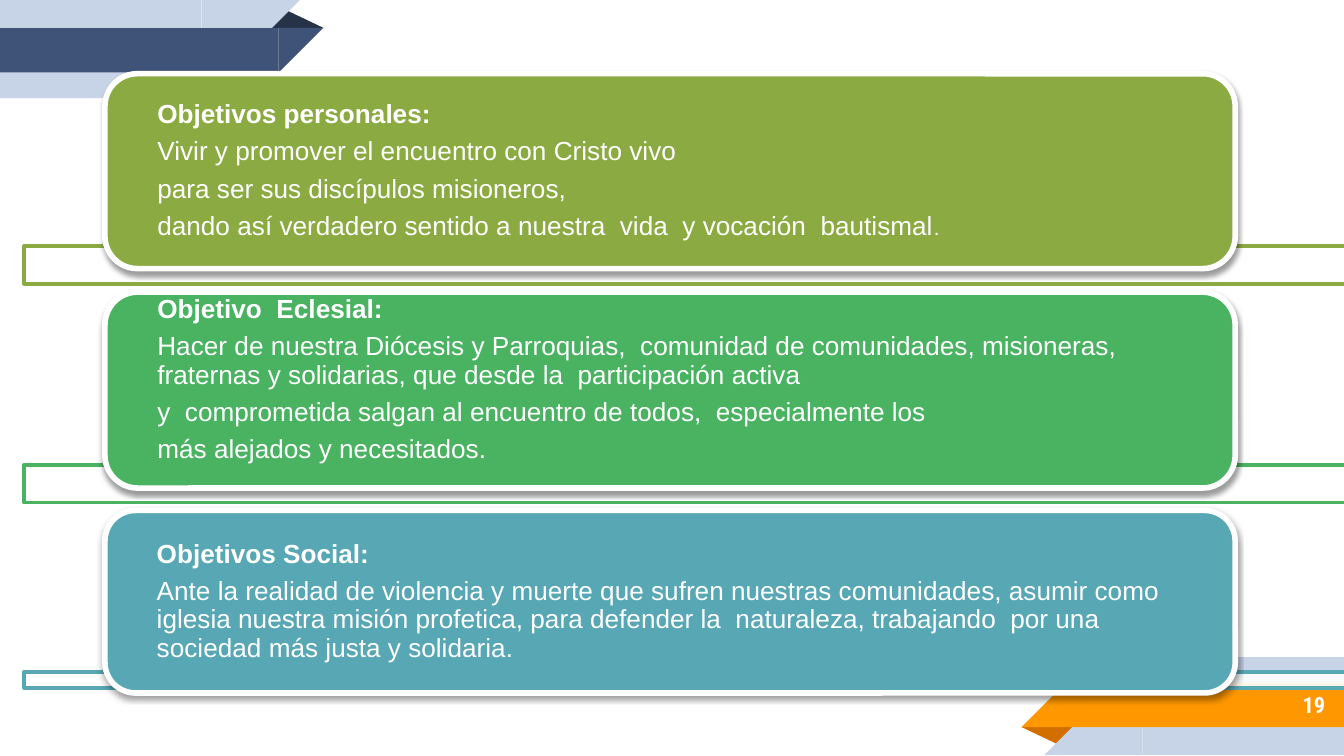
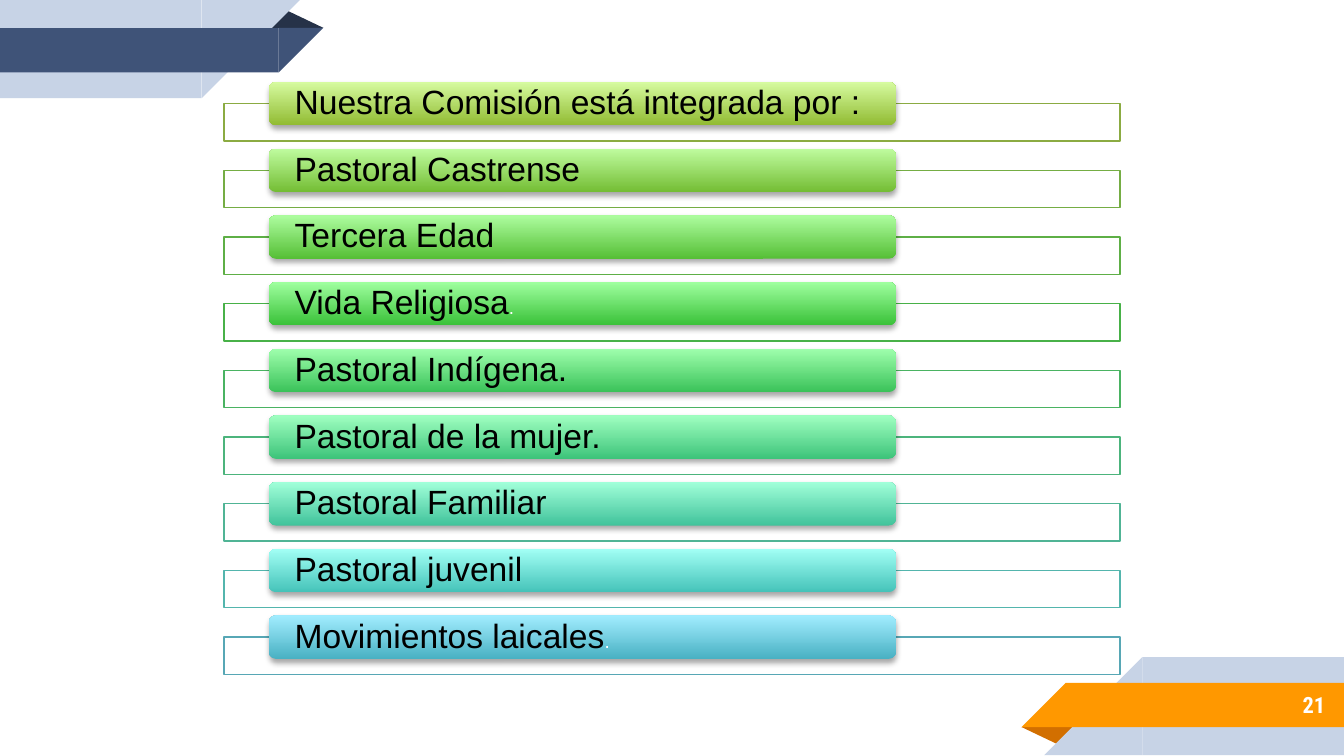
"""Build two slides: pastoral objectives and the members of the commission."""
from lxml.etree import SubElement
from pptx import Presentation
from pptx.dml.color import RGBColor
from pptx.enum.shapes import MSO_SHAPE as SHAPE
from pptx.enum.text import MSO_ANCHOR as ANCHOR, PP_ALIGN as ALIGN
from pptx.oxml.ns import qn
from pptx.util import Pt

COLORS = {
    "white": "FFFFFF", "black": "000000", "pale": "C7D3E6",
    "navy": "3F5378", "navy_fold": "263248",
    "orange": "FF9800", "orange_fold": "D26F00",
    "olive": "8BAB42", "green": "4AB362", "teal": "57A7B5",
}
BODY_FONT, NUMBER_FONT = "Arial", "Roboto Condensed"

OBJECTIVES = [
    {"color": "olive", "height": 104.4, "frame": (131.8, 20.2), "lines": [
        "Objetivos personales:",
        "Vivir y promover el encuentro con Cristo vivo",
        "para ser sus discípulos misioneros,",
        "dando así verdadero sentido a nuestra  vida  y vocación  bautismal"],
     "tail": {"text": ".", "size": 11}},
    {"color": "green", "height": 105, "frame": (249, 20.2), "lift": 10.5, "lines": [
        "Objetivo  Eclesial:",
        "Hacer de nuestra Diócesis y Parroquias,  comunidad de comunidades, "
        "misioneras, fraternas y solidarias, que desde la  participación activa",
        "y  comprometida salgan al encuentro de todos,  especialmente los",
        "más alejados y necesitados."]},
    {"color": "teal", "height": 97.8, "frame": (360, 8.6), "lines": [
        "Objetivos Social:",
        "Ante la realidad de violencia y muerte que sufren nuestras comunidades, "
        "asumir como iglesia nuestra misión profetica, para defender la  "
        "naturaleza, trabajando  por una sociedad más justa y solidaria."]},
]

MEMBERS = [
    ("Nuestra Comisión está integrada por :", "8BAB42", "91BB32", "D6FBA0"),
    ("Pastoral Castrense", "75AD44", "74BD34", "BFFC9F"),
    ("Tercera Edad", "5EAF46", "56BF36", "ADFD9F"),
    ("Vida Religiosa", "48B148", "39C138", "9FFF9F"),
    ("Pastoral Indígena.", "4AB362", "3AC259", "9FFFAD"),
    ("Pastoral de la mujer.", "4CB47C", "3DC47A", "A0FFC1"),
    ("Pastoral Familiar", "50B495", "41C39B", "A1FFD9"),
    ("Pastoral juvenil", "53B5AD", "45C3B9", "A2FFF5"),
    ("Movimientos laicales", "57A7B5", "49B1C3", "A2EDFF"),
]
DOTTED = ("Vida Religiosa", "Movimientos laicales")


def rgb(color):
    """Turn a colour name or a hex string into an RGBColor."""
    return RGBColor.from_string(COLORS.get(color, color))


def add_block(page, kind, at, fill=None, line=None, width=1, rotation=0, flip=False):
    """Add a preset shape without shadow, at (left, top, width, height)."""
    block = page.shapes.add_shape(kind, *map(Pt, at))
    block.shadow.inherit = False
    block.rotation = rotation
    if flip:
        block._element.spPr.find(qn("a:xfrm")).set("flipH", "1")
    if fill:
        block.fill.solid()
        block.fill.fore_color.rgb = rgb(fill)
    if line:
        block.line.color.rgb = rgb(line)
        block.line.width = Pt(width)
    else:
        block.line.fill.background()
    return block


def add_shadow(block, opacity, distance):
    """Give a shape a soft black shadow that falls downwards."""
    effects = block._element.spPr.find(qn("a:effectLst"))
    shadow = SubElement(effects, qn("a:outerShdw"), blurRad=str(Pt(3.1)),
                        dist=str(Pt(distance)), dir="5400000", rotWithShape="0")
    color = SubElement(shadow, qn("a:srgbClr"), val=COLORS["black"])
    SubElement(color, qn("a:alpha"), val=str(opacity * 1000))


def add_frame(page, at, line, width):
    """Add an outlined rectangle with a nearly opaque white fill."""
    frame = add_block(page, SHAPE.RECTANGLE, at, "white", line, width)
    color = frame._element.spPr.find(qn("a:solidFill")).find(qn("a:srgbClr"))
    SubElement(color, qn("a:alpha"), val="90000")


def set_frame(box, side, top=0, bottom=0):
    """Wrap the text of a box, centre it vertically and set its insets."""
    frame = box.text_frame
    frame.word_wrap = True
    frame.vertical_anchor = ANCHOR.MIDDLE
    frame.margin_left = frame.margin_right = Pt(side)
    frame.margin_top, frame.margin_bottom = Pt(top), Pt(bottom)
    return frame


def add_span(para, text, size=14, font=BODY_FONT, color="white", bold=False):
    """Add a formatted run of text to a paragraph."""
    span = para.add_run()
    span.text = text
    span.font.size = Pt(size)
    span.font.name = font
    span.font.bold = bold
    span.font.color.rgb = rgb(color)


def add_para(frame, first=True, after=4.9):
    """Return a left-aligned paragraph with tight lines."""
    para = frame.paragraphs[0] if first else frame.add_paragraph()
    para.alignment = ALIGN.LEFT
    para.line_spacing = 0.9
    para.space_after = Pt(after)
    return para


def add_page(deck, number):
    """Add a slide with the corner ribbons and its page number."""
    page = deck.slides.add_slide(deck.slide_layouts[6])
    box, wedge, fold = SHAPE.RECTANGLE, SHAPE.RIGHT_TRIANGLE, SHAPE.ISOSCELES_TRIANGLE
    ribbons = [
        (fold, (547.2, 389.5, 31, 10), "orange_fold", 180, False),
        (box, (612, 352, 108, 52.6), "pale", 0, True),
        (wedge, (559.4, 352, 52.6, 52.6), "pale", 0, True),
        (box, (571, 365.8, 149, 23.8), "orange", 0, True),
        (wedge, (547.2, 365.8, 23.8, 23.8), "orange", 0, True),
        (fold, (142.4, 5, 31, 10), "navy_fold", 0, False),
        (box, (0, 0, 108, 52.6), "pale", 180, True),
        (wedge, (108, 0, 52.6, 52.6), "pale", 180, True),
        (box, (0, 15, 149.3, 23.8), "navy", 180, True),
        (wedge, (149.3, 15, 23.8, 23.8), "navy", 180, True),
    ]
    for kind, at, color, rotation, flip in ribbons:
        block = add_block(page, kind, at, color, rotation=rotation, flip=flip)
        if kind == fold:
            block.adjustments[0] = 0.324
    label = page.shapes.add_textbox(Pt(600), Pt(365), Pt(117), Pt(25.2))
    para = set_frame(label, 7.2, 7.2, 7.2).paragraphs[0]
    para.alignment = ALIGN.RIGHT
    add_span(para, str(number), size=12, font=NUMBER_FONT, bold=True)
    return page


def add_objective(page, index, color, height, frame, lines, lift=0, tail=None):
    """Add an objective card with the frame behind it."""
    frame_top, frame_height = frame
    add_frame(page, (13, frame_top, 866, frame_height), color, 2)
    card = add_block(page, SHAPE.ROUNDED_RECTANGLE,
                     (56.2, 39.5 + 117 * index, 605.5, height), color, "white", 3)
    add_shadow(card, 38, 1.6)
    body = set_frame(card, 23, bottom=lift)
    for position, text in enumerate(lines):
        para = add_para(body, first=position == 0)
        add_span(para, text, bold=position == 0)
    if tail:
        add_span(para, **tail)


def add_member(page, index, name, line, dark, light):
    """Add a gradient pill with a member's name and the frame behind it."""
    top = 43.9 + 35.73 * index
    add_frame(page, (120, top + 11.6, 480, 20), line, 0.75)
    pill = add_block(page, SHAPE.ROUNDED_RECTANGLE, (144, top, 336, 23.3))
    pill.fill.gradient()
    pill.fill.gradient_angle = 90
    for stop, color in zip(pill.fill.gradient_stops, (dark, light)):
        stop.color.rgb = rgb(color)
    add_shadow(pill, 35, 1.8)
    para = add_para(set_frame(pill, 12.7), after=6.3)
    add_span(para, name, size=18, color="black")
    if name in DOTTED:
        add_span(para, ".", size=10)


def main():
    """Build both slides and save the deck."""
    deck = Presentation()
    deck.slide_width, deck.slide_height = Pt(720), Pt(405)
    page = add_page(deck, 19)
    for index, objective in enumerate(OBJECTIVES):
        add_objective(page, index, **objective)
    page = add_page(deck, 21)
    for index, member in enumerate(MEMBERS):
        add_member(page, index, *member)
    deck.save("out.pptx")


if __name__ == "__main__":
    main()
